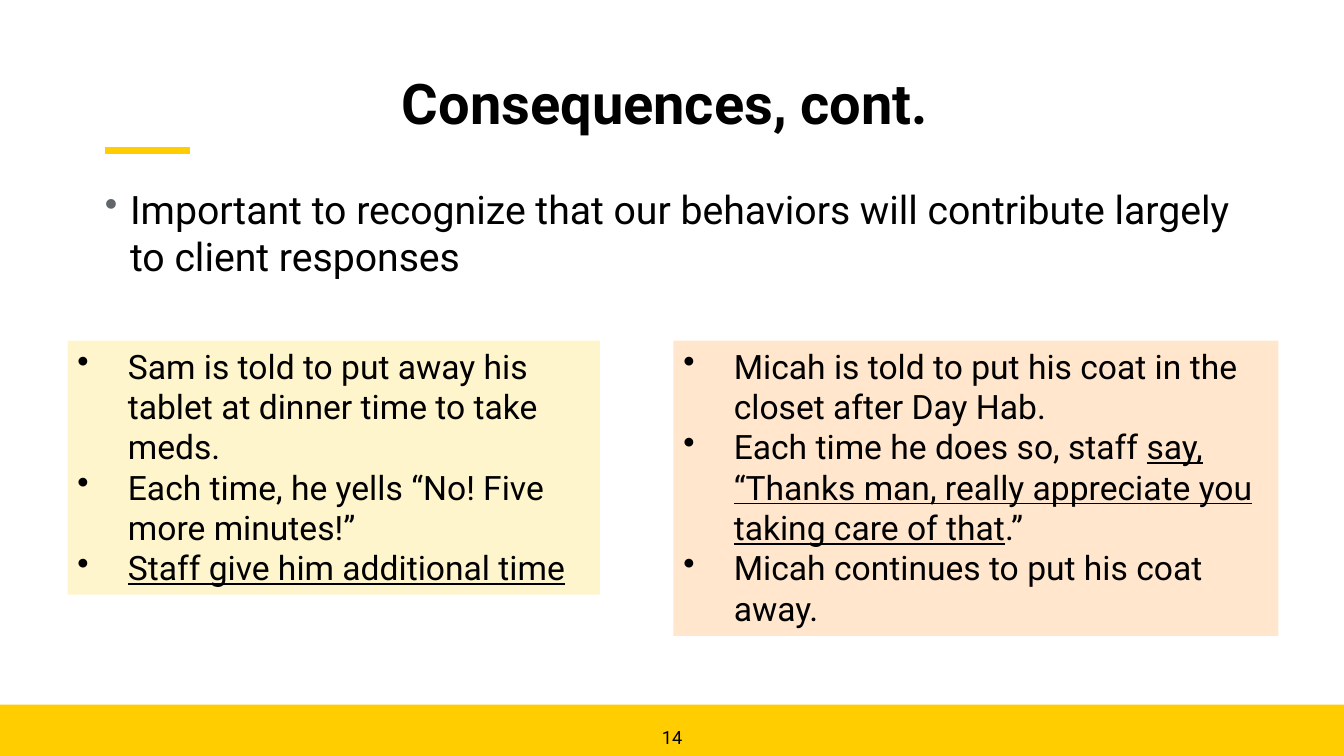
import pptx
import pptx.dml.color
import pptx.enum.shapes
import pptx.enum.text
import pptx.oxml
import pptx.oxml.ns
import pptx.util
from pptx.util import Inches


def color(hex_string):
    """Turn a hex string into a colour."""
    return pptx.dml.color.RGBColor.from_string(hex_string)


class SlideBuilder:
    """Hold the style and the current slide."""

    FONT = "Roboto"
    INK = "000000"
    GOLD = "FFCD00"
    BULLET_GRAY = "62666A"
    CENTER = pptx.enum.text.PP_ALIGN.CENTER
    LEFT = pptx.enum.text.PP_ALIGN.LEFT
    TOP = pptx.enum.text.MSO_ANCHOR.TOP
    MIDDLE = pptx.enum.text.MSO_ANCHOR.MIDDLE
    BOTTOM = pptx.enum.text.MSO_ANCHOR.BOTTOM

    def __init__(self, slide):
        """Keep the slide to draw on."""
        self.slide = slide

    def rectangle(self, left, top, width, height, fill):
        """Add a plain filled rectangle."""
        shape = self.slide.shapes.add_shape(
            pptx.enum.shapes.MSO_SHAPE.RECTANGLE,
            Inches(left), Inches(top), Inches(width), Inches(height))
        shape.shadow.inherit = False
        shape.fill.solid()
        shape.fill.fore_color.rgb = color(fill)
        shape.line.fill.background()
        return shape

    def rule(self, left, top, width, weight):
        """Add a horizontal gold line."""
        connector = self.slide.shapes.add_connector(
            pptx.enum.shapes.MSO_CONNECTOR.STRAIGHT,
            Inches(left), Inches(top), Inches(left + width), Inches(top))
        connector.line.color.rgb = color(self.GOLD)
        connector.line.width = pptx.util.Pt(weight)
        properties = connector._element.spPr
        properties.append(pptx.oxml.parse_xml(
            "<a:effectLst %s/>" % pptx.oxml.ns.nsdecls("a")))

    def bullet(self, paragraph, indent, bullet_color=None, percent=100):
        """Give a paragraph a hanging bullet."""
        properties = paragraph._p.get_or_add_pPr()
        properties.set("marL", str(Inches(indent)))
        properties.set("indent", str(-Inches(indent)))
        namespace = pptx.oxml.ns.nsdecls("a")
        parts = []
        if bullet_color:
            parts.append(f'<a:buClr {namespace}><a:srgbClr val="{bullet_color}"/></a:buClr>')
        parts.append(f'<a:buSzPct {namespace} val="{percent * 1000}"/>')
        parts.append(f'<a:buChar {namespace} char="•"/>')
        for part in parts:
            properties.append(pptx.oxml.parse_xml(part))

    def run(self, paragraph, text, size, bold=False, underline=False):
        """Add one styled run."""
        run = paragraph.add_run()
        run.text = text
        run.font.name = self.FONT
        run.font.size = pptx.util.Pt(size)
        run.font.color.rgb = color(self.INK)
        run.font.bold = bold
        run.font.underline = underline

    def text(self, left, top, width, height, content, size, align, anchor, bold=False):
        """Add a text box without margins and return its paragraph."""
        box = self.slide.shapes.add_textbox(
            Inches(left), Inches(top), Inches(width), Inches(height))
        frame = box.text_frame
        frame.word_wrap = True
        frame.vertical_anchor = anchor
        frame.margin_left = frame.margin_right = 0
        frame.margin_top = frame.margin_bottom = 0
        paragraph = frame.paragraphs[0]
        paragraph.alignment = align
        self.run(paragraph, content, size, bold)
        return paragraph

    def example(self, left, width, height, fill, items):
        """Add a coloured panel of bulleted items made of (text, underline) runs."""
        frame = self.rectangle(left, 3.38, width, height, fill).text_frame
        frame.word_wrap = True
        frame.auto_size = pptx.enum.text.MSO_AUTO_SIZE.SHAPE_TO_FIT_TEXT
        frame.vertical_anchor = self.TOP
        for index, runs in enumerate(items):
            paragraph = frame.add_paragraph() if index else frame.paragraphs[0]
            paragraph.alignment = self.LEFT
            self.bullet(paragraph, 0.5)
            for content, underline in runs:
                self.run(paragraph, content, 24, underline=underline)


def main():
    """Build and save the slide."""
    presentation = pptx.Presentation()
    presentation.slide_width = Inches(13.33)
    presentation.slide_height = Inches(7.5)
    slide = presentation.slides.add_slide(presentation.slide_layouts[6])
    builder = SlideBuilder(slide)

    builder.rectangle(0, 6.99, 13.33, 0.51, builder.GOLD)
    builder.rule(1.04, 1.49, 0.84, 5)
    builder.text(6.34, 7.16, 0.65, 0.26, "14", 13, builder.CENTER, builder.BOTTOM)
    title = builder.text(1.04, 0.58, 11.25, 0.95, "Consequences, cont. ", 40,
                         builder.CENTER, builder.MIDDLE, bold=True)
    title.line_spacing = 0.9
    message = builder.text(
        1.04, 1.84, 11.27, 4.66,
        "Important to recognize that our behaviors will contribute largely to client responses",
        28, builder.LEFT, builder.TOP)
    builder.bullet(message, 0.25, builder.BULLET_GRAY, 95)

    builder.example(0.67, 5.28, 2.52, "FFF5CC", [
        [("Sam is told to put away his tablet at dinner time to take meds.", False)],
        [("Each time, he yells “No! Five more minutes!”", False)],
        [("Staff give him additional time", True)],
    ])
    builder.example(6.68, 6, 2.93, "FFE6CC", [
        [("Micah is told to put his coat in the closet after Day Hab.", False)],
        [("Each time he does so, staff ", False),
         ("say, “Thanks man, really appreciate you taking care of that", True),
         (".”", False)],
        [("Micah continues to put his coat away.", False)],
    ])
    presentation.save("out.pptx")


if __name__ == "__main__":
    main()
